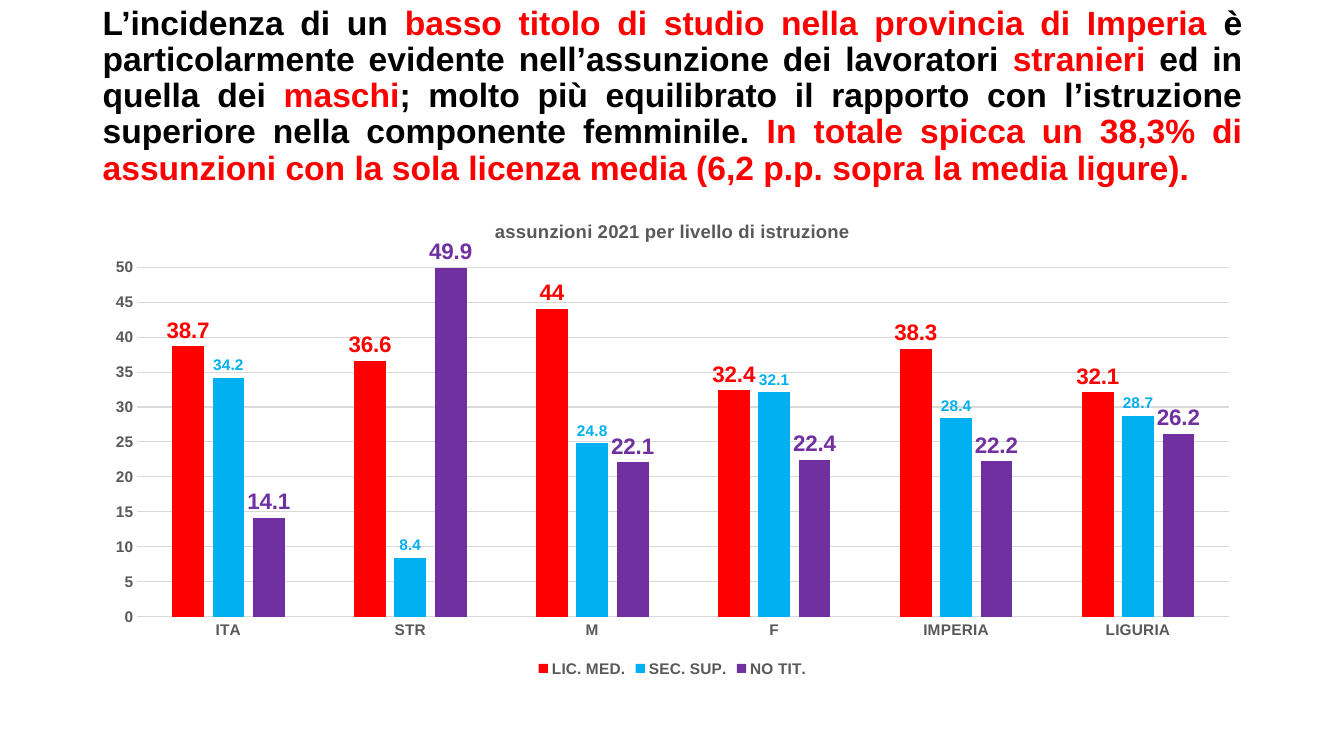
from pptx import Presentation
from pptx.chart.data import CategoryChartData
from pptx.dml.color import RGBColor
from pptx.enum.chart import XL_CHART_TYPE as ChartType
from pptx.enum.chart import XL_LABEL_POSITION as LabelPosition
from pptx.enum.chart import XL_LEGEND_POSITION as LegendPosition
from pptx.enum.chart import XL_TICK_MARK as TickMark
from pptx.enum.text import MSO_ANCHOR as Anchor
from pptx.enum.text import PP_ALIGN as Align
from pptx.util import Inches, Pt

FONT = "Arial"
COLORS = {
    "black": "000000",
    "red": "FF0000",
    "blue": "00B0F0",
    "purple": "7030A0",
    "gray": "595959",
    "grid": "D9D9D9",
}
HEADLINE = [
    ("L’incidenza di un ", "black"),
    ("basso titolo di studio nella provincia di Imperia ", "red"),
    ("è particolarmente evidente nell’assunzione dei lavoratori ", "black"),
    ("stranieri", "red"),
    (" ed in quella dei ", "black"),
    ("maschi", "red"),
    ("; molto più equilibrato il rapporto con l’istruzione superiore "
     "nella componente femminile. ", "black"),
    ("In totale spicca un 38,3% di assunzioni con la sola licenza media "
     "(6,2 p.p. sopra la media ligure).", "red"),
]
CATEGORIES = ["ITA", "STR", "M", "F", "IMPERIA", "LIGURIA"]
SERIES = [
    ("LIC. MED.", [38.7, 36.6, 44, 32.4, 38.3, 32.1], "red", 16),
    ("SEC. SUP.", [34.2, 8.4, 24.8, 32.1, 28.4, 28.7], "blue", 11),
    ("NO TIT.", [14.1, 49.9, 22.1, 22.4, 22.2, 26.2], "purple", 16),
]


def rgb(name):
    return RGBColor.from_string(COLORS[name])


def style_font(font, size, color):
    font.name = FONT
    font.size = Pt(size)
    font.bold = True
    font.color.rgb = rgb(color)


def style_line(line):
    line.color.rgb = rgb("grid")
    line.width = Pt(0.75)


def add_headline(page, left, top, width, height):
    box = page.shapes.add_textbox(left, top, width, height)
    frame = box.text_frame
    frame.word_wrap = True
    frame.vertical_anchor = Anchor.MIDDLE
    para = frame.paragraphs[0]
    para.alignment = Align.JUSTIFY
    para.line_spacing = 0.9
    for text, color in HEADLINE:
        span = para.add_run()
        span.text = text
        style_font(span.font, 24, color)


def style_axes(chart):
    for axis in (chart.category_axis, chart.value_axis):
        axis.major_tick_mark = TickMark.NONE
        axis.minor_tick_mark = TickMark.NONE
        style_font(axis.tick_labels.font, 11, "gray")
    style_line(chart.category_axis.format.line)
    values = chart.value_axis
    values.minimum_scale = 0
    values.maximum_scale = 50
    values.major_unit = 5
    values.format.line.fill.background()
    style_line(values.major_gridlines.format.line)


def style_series(plot):
    for series, (_, _, color, size) in zip(plot.series, SERIES):
        series.format.fill.solid()
        series.format.fill.fore_color.rgb = rgb(color)
        series.invert_if_negative = False
        labels = series.data_labels
        labels.show_value = True
        labels.position = LabelPosition.OUTSIDE_END
        style_font(labels.font, size, color)


def add_title(chart, text):
    chart.has_title = True
    title = chart.chart_title
    title.include_in_layout = False
    span = title.text_frame.paragraphs[0].add_run()
    span.text = text
    style_font(span.font, 13.2, "gray")


def add_legend(chart):
    chart.has_legend = True
    chart.legend.position = LegendPosition.BOTTOM
    chart.legend.include_in_layout = False
    style_font(chart.legend.font, 11, "gray")


def add_hiring_chart(page, left, top, width, height):
    data = CategoryChartData()
    data.categories = CATEGORIES
    for name, values, _, _ in SERIES:
        data.add_series(name, values)
    chart = page.shapes.add_chart(
        ChartType.COLUMN_CLUSTERED, left, top, width, height, data
    ).chart
    style_font(chart.font, 11, "black")
    plot = chart.plots[0]
    plot.vary_by_categories = False
    plot.gap_width = 219
    plot.overlap = -27
    add_title(chart, "assunzioni 2021 per livello di istruzione")
    add_legend(chart)
    style_axes(chart)
    style_series(plot)


def main():
    deck = Presentation()
    deck.slide_width = Inches(13.33)
    deck.slide_height = Inches(7.5)
    page = deck.slides.add_slide(deck.slide_layouts[6])
    left, width = Inches(0.92), Inches(11.5)
    add_headline(page, left, Inches(0.07), width, Inches(1.78))
    add_hiring_chart(page, left, Inches(2), width, Inches(4.76))
    deck.save("out.pptx")


if __name__ == "__main__":
    main()
